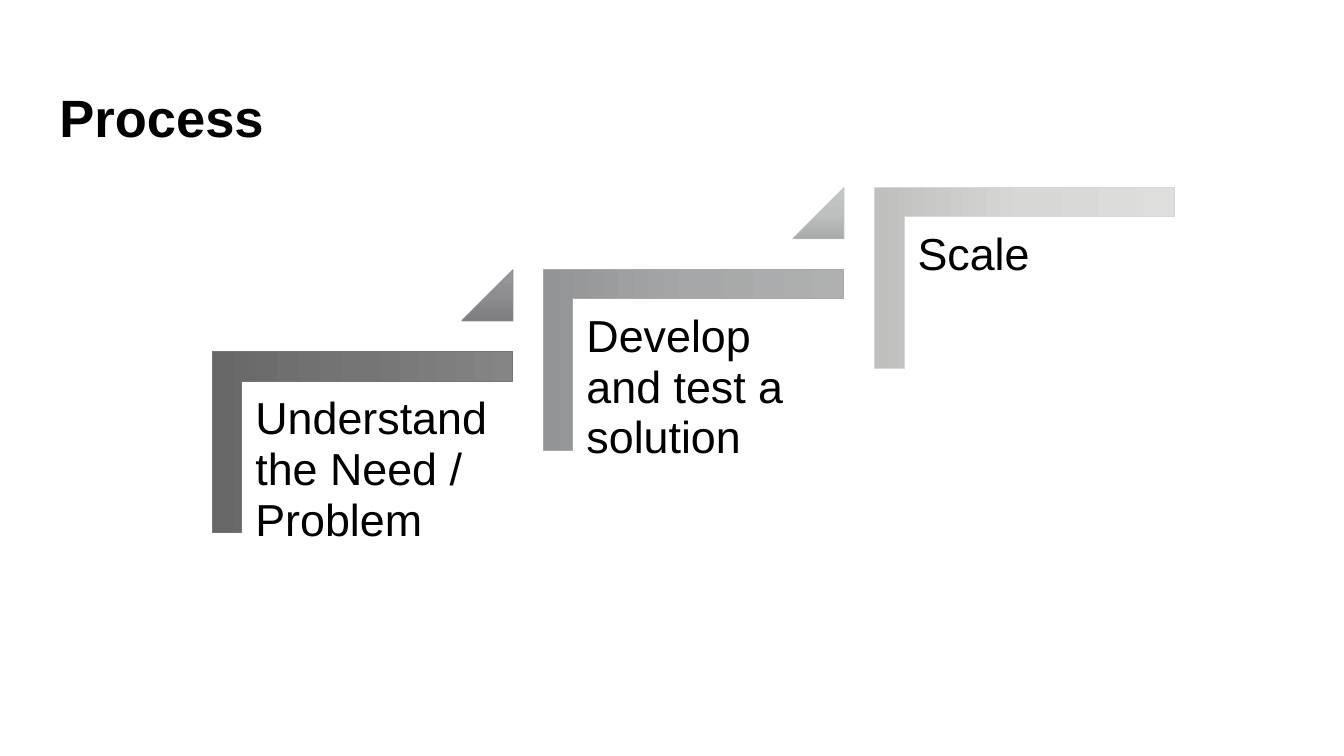
"""Build the Process slide: three ascending steps with triangles between them."""
from copy import deepcopy
from dataclasses import dataclass

from pptx import Presentation
from pptx.dml.color import RGBColor
from pptx.enum.shapes import MSO_SHAPE as Preset
from pptx.enum.text import MSO_ANCHOR as Anchor
from pptx.shapes.autoshape import Shape
from pptx.slide import Slide
from pptx.util import Pt

BLACK = RGBColor(0x00, 0x00, 0x00)
STEP_GRADIENTS = (
    (RGBColor(0x86, 0x85, 0x86), RGBColor(0x76, 0x75, 0x76), RGBColor(0x69, 0x68, 0x69)),
    (RGBColor(0xAF, 0xB1, 0xB1), RGBColor(0xA5, 0xA7, 0xA8), RGBColor(0x92, 0x94, 0x95)),
    (RGBColor(0xDE, 0xDF, 0xDD), RGBColor(0xD7, 0xD8, 0xD6), RGBColor(0xBF, 0xC0, 0xBE)),
)
RISE_GRADIENTS = (
    (RGBColor(0x9A, 0x99, 0x9B), RGBColor(0x8D, 0x8D, 0x8F), RGBColor(0x7D, 0x7D, 0x7F)),
    (RGBColor(0xC6, 0xC8, 0xC6), RGBColor(0xBD, 0xC0, 0xBE), RGBColor(0xA8, 0xAB, 0xA9)),
)

STEP_LEFT, STEP_TOP = 151.9, 251.3
STEP_RUN, STEP_RISE = 236.5, 58.7
STEP_WIDTH, STEP_HEIGHT = 213.8, 128.9
LABEL_OFFSET = 20.9
TRIANGLE_OFFSET, TRIANGLE_SIZE = 177.8, 36.7

TITLE_FORMAT = {"name": "Arial", "size": Pt(37.5), "bold": True}
LABEL_FORMAT = {"name": "Arial", "size": Pt(32)}


@dataclass(frozen=True)
class Box:
    left: float
    top: float
    width: float
    height: float

    def lengths(self) -> tuple[Pt, Pt, Pt, Pt]:
        return Pt(self.left), Pt(self.top), Pt(self.width), Pt(self.height)


@dataclass(frozen=True)
class Step:
    label: str
    gradient: tuple[RGBColor, RGBColor, RGBColor]


STEPS = tuple(
    Step(label, gradient)
    for label, gradient in zip(
        ("Understand the Need / Problem", "Develop and test a solution", "Scale"),
        STEP_GRADIENTS,
    )
)


def add_text(slide: Slide, box: Box, text: str, font_format: dict,
             inset: float = 0, top_inset: float = 0, spacing: float = 1.0) -> None:
    frame = slide.shapes.add_textbox(*box.lengths()).text_frame
    frame_format = {
        "word_wrap": True, "vertical_anchor": Anchor.TOP,
        "margin_left": Pt(inset), "margin_right": Pt(inset),
        "margin_top": Pt(top_inset), "margin_bottom": Pt(inset),
    }
    for name, value in frame_format.items():
        setattr(frame, name, value)
    paragraph = frame.paragraphs[0]
    paragraph.text = text
    paragraph.line_spacing = spacing
    for name, value in font_format.items():
        setattr(paragraph.font, name, value)
    paragraph.font.color.rgb = BLACK


def add_gradient_shape(slide: Slide, preset: Preset, box: Box,
                       gradient: tuple[RGBColor, RGBColor, RGBColor],
                       adjustments: tuple[float, ...]) -> Shape:
    shape = slide.shapes.add_shape(preset, *box.lengths())
    shape.shadow.inherit = False
    for index, value in enumerate(adjustments):
        shape.adjustments[index] = value
    shape.fill.gradient()
    shape.fill.gradient_angle = 270
    stop_list = shape.fill.gradient_stops[0]._gs.getparent()
    stop_list.insert(1, deepcopy(stop_list[0]))
    for stop, position, color in zip(shape.fill.gradient_stops, (0, 0.5, 1), gradient):
        stop.position = position
        stop.color.rgb = color
    shape.line.color.rgb = gradient[1]
    shape.line.width = Pt(0.5)
    return shape


def add_step(slide: Slide, step: Step, left: float, top: float) -> None:
    turn = (STEP_WIDTH - STEP_HEIGHT) / 2
    corner_box = Box(left + turn, top - turn, STEP_HEIGHT, STEP_WIDTH)
    corner = add_gradient_shape(slide, Preset.CORNER, corner_box,
                                step.gradient, (0.161, 0.161))
    corner.rotation = 90
    label_box = Box(left + LABEL_OFFSET, top + LABEL_OFFSET, 193, 169.2)
    add_text(slide, label_box, step.label, LABEL_FORMAT,
             inset=9.6, top_inset=9.6, spacing=0.94)


def main() -> None:
    presentation = Presentation()
    presentation.slide_width, presentation.slide_height = Pt(960), Pt(540)
    slide = presentation.slides.add_slide(presentation.slide_layouts[6])
    add_text(slide, Box(42.5, 56.9, 900, 45.4), "Process", TITLE_FORMAT, top_inset=3.6)
    for index, step in enumerate(STEPS):
        left = STEP_LEFT + index * STEP_RUN
        top = STEP_TOP - index * STEP_RISE
        add_step(slide, step, left, top)
        if index < len(RISE_GRADIENTS):
            triangle_box = Box(left + TRIANGLE_OFFSET, top - STEP_RISE,
                               TRIANGLE_SIZE, TRIANGLE_SIZE)
            add_gradient_shape(slide, Preset.ISOSCELES_TRIANGLE, triangle_box,
                               RISE_GRADIENTS[index], (1.0,))
    presentation.save("out.pptx")


if __name__ == "__main__":
    main()
